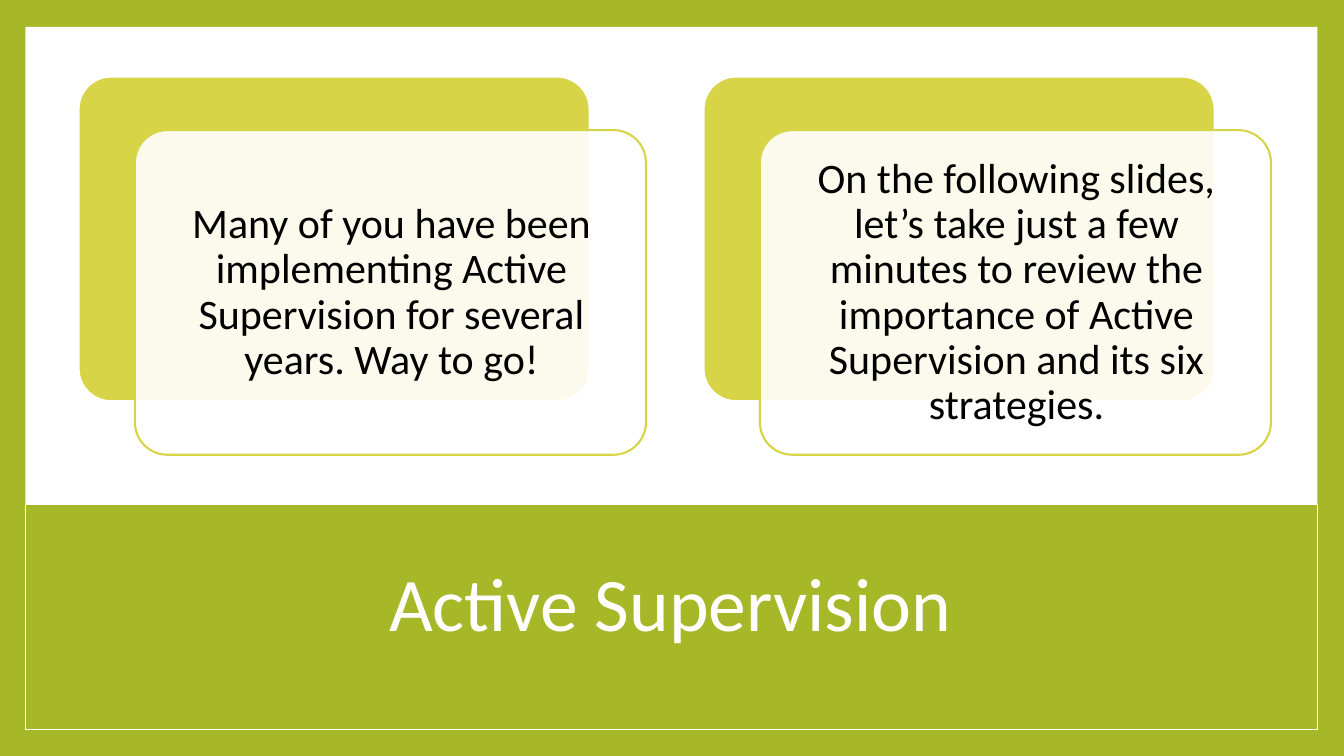
"""Build the Active Supervision slide with two layered cards above a title band."""
import pptx
import pptx.util
import pptx.dml.color
import pptx.enum.shapes
import pptx.enum.text
import pptx.oxml.ns
import lxml.etree

Cm = pptx.util.Cm
Pt = pptx.util.Pt
SHAPES = pptx.enum.shapes.MSO_SHAPE
COLOURS = {"green": "A6B727", "lime": "D7D447", "white": "FFFFFF", "black": "000000"}


def add_panel(kind, place, fill, line=None, width=1.5):
    """Add a filled shape with an optional outline."""
    panel = page.shapes.add_shape(kind, *map(Cm, place))
    panel.shadow.inherit = False
    panel.fill.solid()
    panel.fill.fore_color.rgb = pptx.dml.color.RGBColor.from_string(COLOURS[fill])
    if line:
        panel.line.color.rgb = pptx.dml.color.RGBColor.from_string(COLOURS[line])
        panel.line.width = Pt(width)
    else:
        panel.line.fill.background()
    if kind == SHAPES.ROUNDED_RECTANGLE:
        panel.adjustments[0] = 0.1
    return panel


def write_text(box, text, size, colour, frame_format):
    """Write one centred paragraph into a box."""
    frame = box.text_frame
    frame_values = {
        "word_wrap": True,
        "auto_size": pptx.enum.text.MSO_AUTO_SIZE.NONE,
        "vertical_anchor": pptx.enum.text.MSO_ANCHOR.MIDDLE,
        **frame_format,
    }
    for name, value in frame_values.items():
        setattr(frame, name, value)
    para = frame.paragraphs[0]
    para.alignment = pptx.enum.text.PP_ALIGN.CENTER
    para.line_spacing = 0.9
    para.space_before = Pt(0)
    span = para.add_run()
    span.text = text
    for name, value in {"name": "Calibri", "size": Pt(size), "bold": False}.items():
        setattr(span.font, name, value)
    span.font.color.rgb = pptx.dml.color.RGBColor.from_string(COLOURS[colour])


deck = pptx.Presentation()
deck.slide_width, deck.slide_height = Cm(33.87), Cm(19.05)
page = deck.slides.add_slide(deck.slide_layouts[5])

add_panel(SHAPES.RECTANGLE, (0, 0, 33.87, 19.05), "green")
add_panel(SHAPES.RECTANGLE, (0.64, 0.68, 32.56, 17.7), "white")
add_panel(SHAPES.RECTANGLE, (0.64, 12.71, 32.56, 5.68), "green", "white", 1)

title = page.shapes.title
title_place = {"left": 3.18, "top": 13.41, "width": 27.43, "height": 3.76}
for name, value in title_place.items():
    setattr(title, name, Cm(value))
write_text(title, "Active Supervision", 54, "white", {})
title.element.getparent().append(title.element)

card_texts = [
    "Many of you have been implementing Active Supervision for several years. Way to go!",
    "On the following slides, let’s take just a few minutes to review the importance "
    "of Active Supervision and its six strategies.",
]
card_left, card_pitch = 1.98, 15.75
card_size = (12.88, 8.18)
margins = {f"margin_{side}": Cm(0.3) for side in ("left", "top", "right", "bottom")}

for index, text in enumerate(card_texts):
    left = card_left + index * card_pitch
    add_panel(SHAPES.ROUNDED_RECTANGLE, (left, 1.93, *card_size), "lime", "white")
    front = add_panel(
        SHAPES.ROUNDED_RECTANGLE, (left + 1.42, 3.28, *card_size), "white", "lime"
    )
    front_colour = front.element.spPr.find(
        "a:solidFill/a:srgbClr", {"a": pptx.oxml.ns.nsuri("a")}
    )
    lxml.etree.SubElement(front_colour, pptx.oxml.ns.qn("a:alpha"), val="90000")
    box = page.shapes.add_textbox(*map(Cm, (left + 1.68, 3.53, 12.42, 7.7)))
    write_text(box, text, 30, "black", margins)

deck.save("out.pptx")
